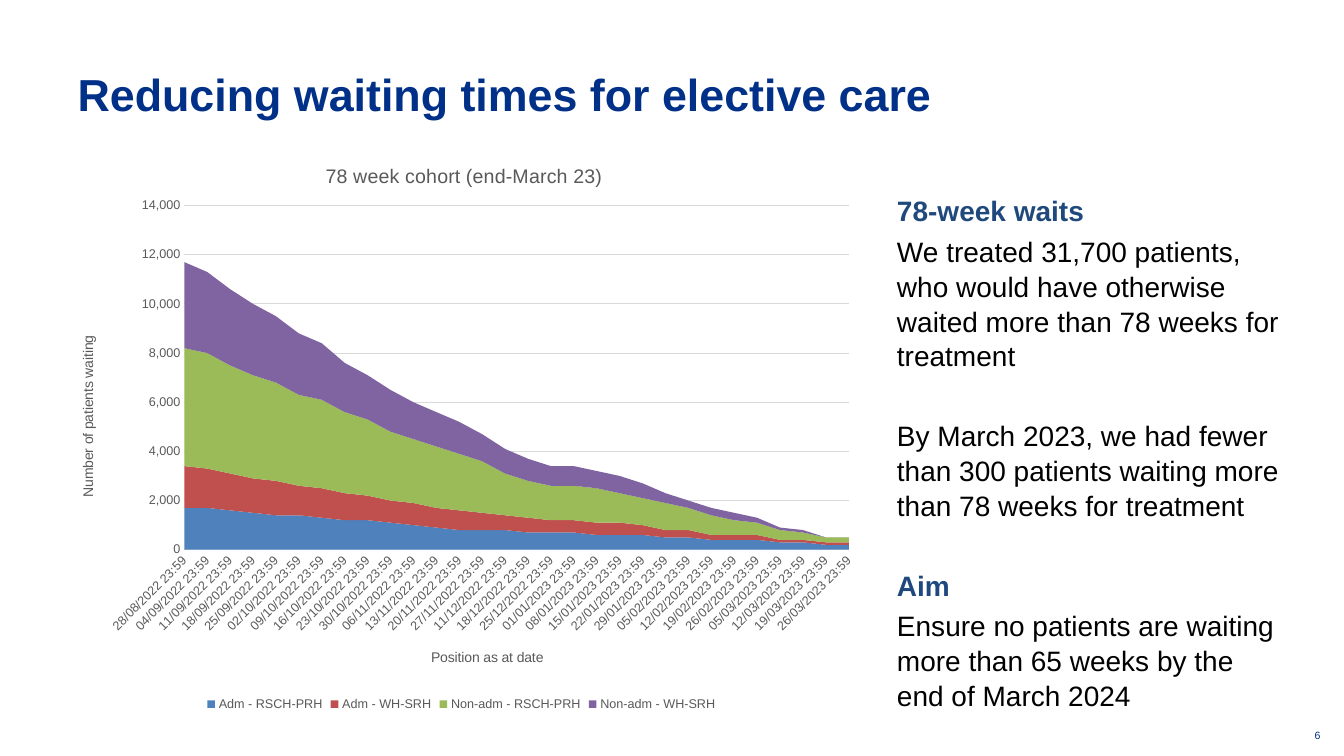
from dataclasses import dataclass
from lxml.etree import SubElement
from pptx import Presentation
from pptx.chart.data import CategoryChartData as Data
from pptx.dml.color import RGBColor as Rgb
from pptx.enum.chart import XL_CHART_TYPE as Kind, XL_LEGEND_POSITION as Place, XL_TICK_MARK as Tick
from pptx.enum.text import MSO_ANCHOR as Anchor, MSO_AUTO_SIZE as Fit, PP_ALIGN as Align
from pptx.oxml import parse_xml
from pptx.oxml.ns import nsdecls, qn
from pptx.util import Cm, Pt

HUES = {
    "navy": "003087", "head": "1F497D", "text": "000000", "grey": "595959", "grid": "D9D9D9",
    "blue": "4F81BD", "red": "C0504D", "green": "9BBB59", "plum": "8064A2",
}
FACE = "Arial"


@dataclass
class Band:
    name: str
    hue: str
    counts: list[int]


@dataclass
class Para:
    text: str
    gap: float
    head: bool = False


BANDS = [
    Band("Adm - RSCH-PRH", "blue", [
        17, 17, 16, 15, 14, 14, 13, 12, 12, 11, 10, 9, 8, 8, 8,
        7, 7, 7, 6, 6, 6, 5, 5, 4, 4, 4, 3, 3, 2, 2]),
    Band("Adm - WH-SRH", "red", [
        17, 16, 15, 14, 14, 12, 12, 11, 10, 9, 9, 8, 8, 7, 6,
        6, 5, 5, 5, 5, 4, 3, 3, 2, 2, 2, 1, 1, 1, 1]),
    Band("Non-adm - RSCH-PRH", "green", [
        48, 47, 44, 42, 40, 37, 36, 33, 31, 28, 26, 25, 23, 21, 17,
        15, 14, 14, 14, 12, 11, 11, 9, 8, 6, 5, 4, 3, 2, 2]),
    Band("Non-adm - WH-SRH", "plum", [
        35, 33, 31, 29, 27, 25, 23, 20, 18, 17, 15, 14, 13, 11, 10,
        9, 8, 8, 7, 7, 6, 4, 3, 3, 3, 2, 1, 1, 0, 0]),
]
DAYS = {
    2022: "28/08 04/09 11/09 18/09 25/09 02/10 09/10 16/10 23/10 30/10 "
          "06/11 13/11 20/11 27/11 11/12 18/12 25/12",
    2023: "01/01 08/01 15/01 22/01 29/01 05/02 12/02 19/02 26/02 05/03 12/03 19/03 26/03",
}
PARAS = [
    Para("78-week waits", 0, True),
    Para("We treated 31,700 patients, who would have otherwise waited more than 78 weeks "
         "for treatment", 4),
    Para("By March 2023, we had fewer than 300 patients waiting more than 78 weeks "
         "for treatment", 32),
    Para("Aim", 32, True),
    Para("Ensure no patients are waiting more than 65 weeks by the end of March 2024", 4),
]


def style(font, size: float, hue: str, bold: bool = False) -> None:
    font.name = FACE
    font.size = Pt(size)
    font.bold = bold
    font.color.rgb = Rgb.from_string(HUES[hue])


def move(shape, left: float, top: float, width: float, height: float) -> None:
    shape.left, shape.top = Cm(left), Cm(top)
    shape.width, shape.height = Cm(width), Cm(height)


def layout(node, index: int, inner: bool = False, **spots: float) -> None:
    for old in node.findall(qn("c:layout")):
        node.remove(old)
    item = parse_xml(f"<c:layout {nsdecls('c')}><c:manualLayout/></c:layout>")
    rules = {"layoutTarget": "inner"} if inner else {}
    rules |= {"xMode": "edge", "yMode": "edge"} | spots
    for tag, value in rules.items():
        SubElement(item[0], qn(f"c:{tag}")).set("val", str(value))
    node.insert(index, item)


def label(title, text: str, size: float, x: float, y: float, turn: int = 0) -> None:
    frame = title.text_frame
    frame.text = text
    style(frame.paragraphs[0].font, size, "grey")
    body = frame._txBody.bodyPr
    body.set("rot", str(turn * 60000))
    body.set("vert", "horz")
    layout(title._element, 1, x=x, y=y)


def add_title(slide) -> None:
    title = slide.shapes.title
    move(title, 1.7, 0.76, 30.48, 3.18)
    frame = title.text_frame
    frame.text = "Reducing waiting times for elective care"
    frame.vertical_anchor = Anchor.MIDDLE
    frame.auto_size = Fit.NONE
    para = frame.paragraphs[0]
    para.alignment = Align.LEFT
    style(para.font, 32, "navy", True)


def add_body(slide) -> None:
    body = slide.placeholders[1]
    move(body, 22.35, 4.72, 10.21, 13.97)
    frame = body.text_frame
    frame.auto_size = Fit.NONE
    frame.text = "\n".join(item.text for item in PARAS)
    for para, item in zip(frame.paragraphs, PARAS):
        props = para._p.get_or_add_pPr()
        props.set("marL", "0")
        props.set("indent", "0")
        SubElement(props, qn("a:buNone"))
        para.space_before = Pt(item.gap)
        para.line_spacing = 1.04
        style(para.font, 20, "head" if item.head else "text", item.head)


def add_number(slide) -> None:
    box = slide.shapes.add_textbox(Cm(32.18), Cm(18.03), Cm(1.35), Cm(1.02))
    frame = box.text_frame
    frame.word_wrap = True
    frame.vertical_anchor = Anchor.MIDDLE
    frame.text = "6"
    para = frame.paragraphs[0]
    para.alignment = Align.RIGHT
    para.space_after = Pt(6)
    style(para.font, 7.5, "navy")


def add_graph(slide) -> None:
    data = Data(number_format="#,##0")
    data.categories = [f"{day}/{year} 23:59" for year, days in DAYS.items() for day in days.split()]
    for band in BANDS:
        data.add_series(band.name, [count * 100 for count in band.counts])
    chart = slide.shapes.add_chart(
        Kind.AREA_STACKED, Cm(1.3), Cm(3.43), Cm(20.65), Cm(14.6), data).chart
    style(chart.font, 10, "text")
    chart.plots[0].vary_by_categories = False
    for series, band in zip(chart.plots[0].series, BANDS):
        series.format.fill.solid()
        series.format.fill.fore_color.rgb = Rgb.from_string(HUES[band.hue])

    dates, scale = chart.category_axis, chart.value_axis
    for axis in (dates, scale):
        axis.major_tick_mark = axis.minor_tick_mark = Tick.NONE
        style(axis.tick_labels.font, 9, "grey")
    dates.has_major_gridlines = False
    scale.has_major_gridlines = True
    for line in (dates.format.line, scale.major_gridlines.format.line):
        line.color.rgb = Rgb.from_string(HUES["grid"])
        line.width = Pt(0.75)
    scale.format.line.fill.background()
    scale.minimum_scale, scale.maximum_scale, scale.major_unit = 0, 14000, 2000
    scale.tick_labels.number_format = "#,##0"
    scale.tick_labels.number_format_is_linked = False
    for cross in scale._element.findall(qn("c:crossBetween")):
        cross.set("val", "midCat")
    dates._element.txPr.bodyPr.set("rot", "-2700000")
    for last in dates._element.findall(qn("c:noMultiLvlLbl")):
        last.addprevious(parse_xml(f'<c:tickLblSkip {nsdecls("c")} val="1"/>'))

    chart.has_title = True
    label(chart.chart_title, "78 week cohort (end-March 23)", 14, 0.33, 0.04)
    label(dates.axis_title, "Position as at date", 10, 0.46, 0.88)
    label(scale.axis_title, "Number of patients waiting", 10, 0.03, 0.34, -90)
    layout(chart._chartSpace.chart.plotArea, 0, True, x=0.162, y=0.12, w=0.811, h=0.594)
    chart.has_legend = True
    chart.legend.position = Place.BOTTOM
    chart.legend.include_in_layout = False
    style(chart.legend.font, 9, "grey")


def main() -> None:
    deck = Presentation()
    deck.slide_width, deck.slide_height = Cm(33.87), Cm(19.05)
    slide = deck.slides.add_slide(deck.slide_layouts[1])
    add_title(slide)
    add_body(slide)
    add_number(slide)
    add_graph(slide)
    deck.save("out.pptx")


if __name__ == "__main__":
    main()
